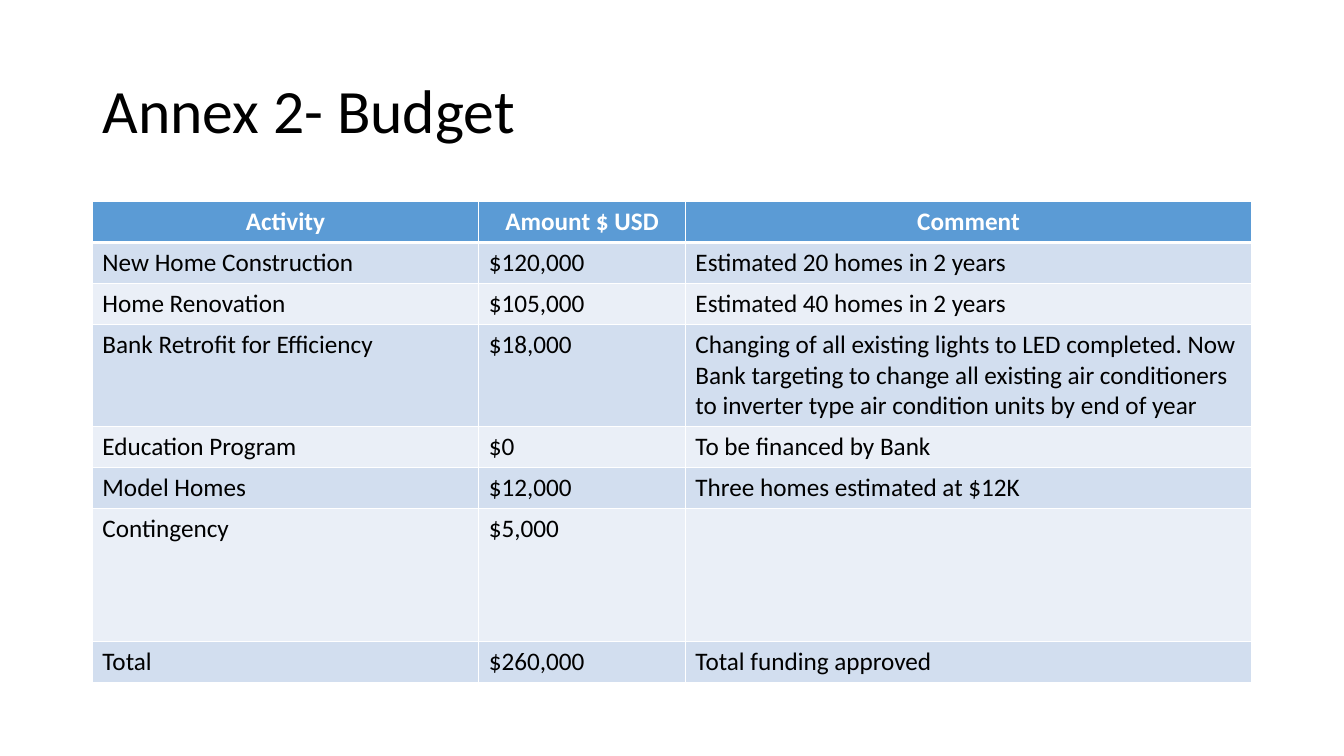
"""Build the Annex 2 budget slide with its table of activities, amounts and comments."""
import lxml.etree
import pptx
import pptx.dml.color
import pptx.enum.text
import pptx.oxml.ns
import pptx.util

Pt = pptx.util.Pt
RGBColor = pptx.dml.color.RGBColor
PP_ALIGN = pptx.enum.text.PP_ALIGN
qn = pptx.oxml.ns.qn

BLACK = RGBColor(0x00, 0x00, 0x00)
WHITE = RGBColor(0xFF, 0xFF, 0xFF)
HEADER_BLUE = RGBColor(0x5B, 0x9B, 0xD5)
BAND_DARK = RGBColor(0xD2, 0xDE, 0xEF)
BAND_LIGHT = RGBColor(0xEA, 0xEF, 0xF7)

LEFT, WIDTH = 66, 828
COLUMN_WIDTHS = [276, 147.6, 404.4]
ROW_HEIGHT = 29.2
TALL_ROWS = {3: 73.2, 6: 95.2}
BUDGET = [
    ("Activity", "Amount $ USD", "Comment"),
    ("New Home Construction", "$120,000", "Estimated 20 homes in 2 years"),
    ("Home Renovation", "$105,000", "Estimated 40 homes in 2 years"),
    ("Bank Retrofit for Efficiency", "$18,000",
     "Changing of all existing lights to LED completed. Now Bank targeting to change "
     "all existing air conditioners to inverter type air condition units by end of year"),
    ("Education Program", "$0", "To be financed by Bank"),
    ("Model Homes", "$12,000", "Three homes estimated at $12K"),
    ("Contingency", "$5,000", ""),
    ("Total", "$260,000", "Total funding approved"),
]
TITLE_FORMAT = {"name": "Calibri", "size": Pt(44), "bold": False}
HEADER_FORMAT = {"name": "Calibri", "size": Pt(18), "bold": True}
BODY_FORMAT = {"name": "Calibri", "size": Pt(18), "bold": False}


def format_paragraph(paragraph, font_format, color, alignment):
    paragraph.alignment = alignment
    for name, value in font_format.items():
        setattr(paragraph.font, name, value)
    paragraph.font.color.rgb = color


def add_borders(cell, widths):
    properties = cell._tc.get_or_add_tcPr()
    for side, width in widths.items():
        line = lxml.etree.SubElement(properties, qn(f"a:ln{side}"), w=str(Pt(width)))
        fill = lxml.etree.SubElement(line, qn("a:solidFill"))
        lxml.etree.SubElement(fill, qn("a:srgbClr"), val=str(WHITE))


presentation = pptx.Presentation()
presentation.slide_width, presentation.slide_height = Pt(960), Pt(540)
slide = presentation.slides.add_slide(presentation.slide_layouts[5])

title = slide.shapes.title
title.left, title.top, title.width, title.height = Pt(LEFT), Pt(28.8), Pt(WIDTH), Pt(104.4)
title.text_frame.text = "Annex 2- Budget"
title.text_frame.vertical_anchor = pptx.enum.text.MSO_ANCHOR.MIDDLE
title.text_frame.paragraphs[0].line_spacing = 0.9
format_paragraph(title.text_frame.paragraphs[0], TITLE_FORMAT, BLACK, PP_ALIGN.LEFT)

row_heights = [TALL_ROWS.get(index, ROW_HEIGHT) for index in range(len(BUDGET))]
table = slide.shapes.add_table(len(BUDGET), len(COLUMN_WIDTHS), Pt(LEFT), Pt(144),
                               Pt(WIDTH), Pt(sum(row_heights))).table
for column, width in zip(table.columns, COLUMN_WIDTHS):
    column.width = Pt(width)

for row_index, texts in enumerate(BUDGET):
    table.rows[row_index].height = Pt(row_heights[row_index])
    is_header = row_index == 0
    band = BAND_DARK if row_index % 2 else BAND_LIGHT
    borders = {"L": 1, "R": 1, "T": 3 if row_index == 1 else 1, "B": 3 if is_header else 1}
    for column_index, text in enumerate(texts):
        cell = table.cell(row_index, column_index)
        cell.text = text
        add_borders(cell, borders)
        cell.fill.solid()
        cell.fill.fore_color.rgb = HEADER_BLUE if is_header else band
        format_paragraph(cell.text_frame.paragraphs[0],
                         HEADER_FORMAT if is_header else BODY_FORMAT,
                         WHITE if is_header else BLACK,
                         PP_ALIGN.CENTER if is_header else PP_ALIGN.LEFT)

presentation.save("out.pptx")
